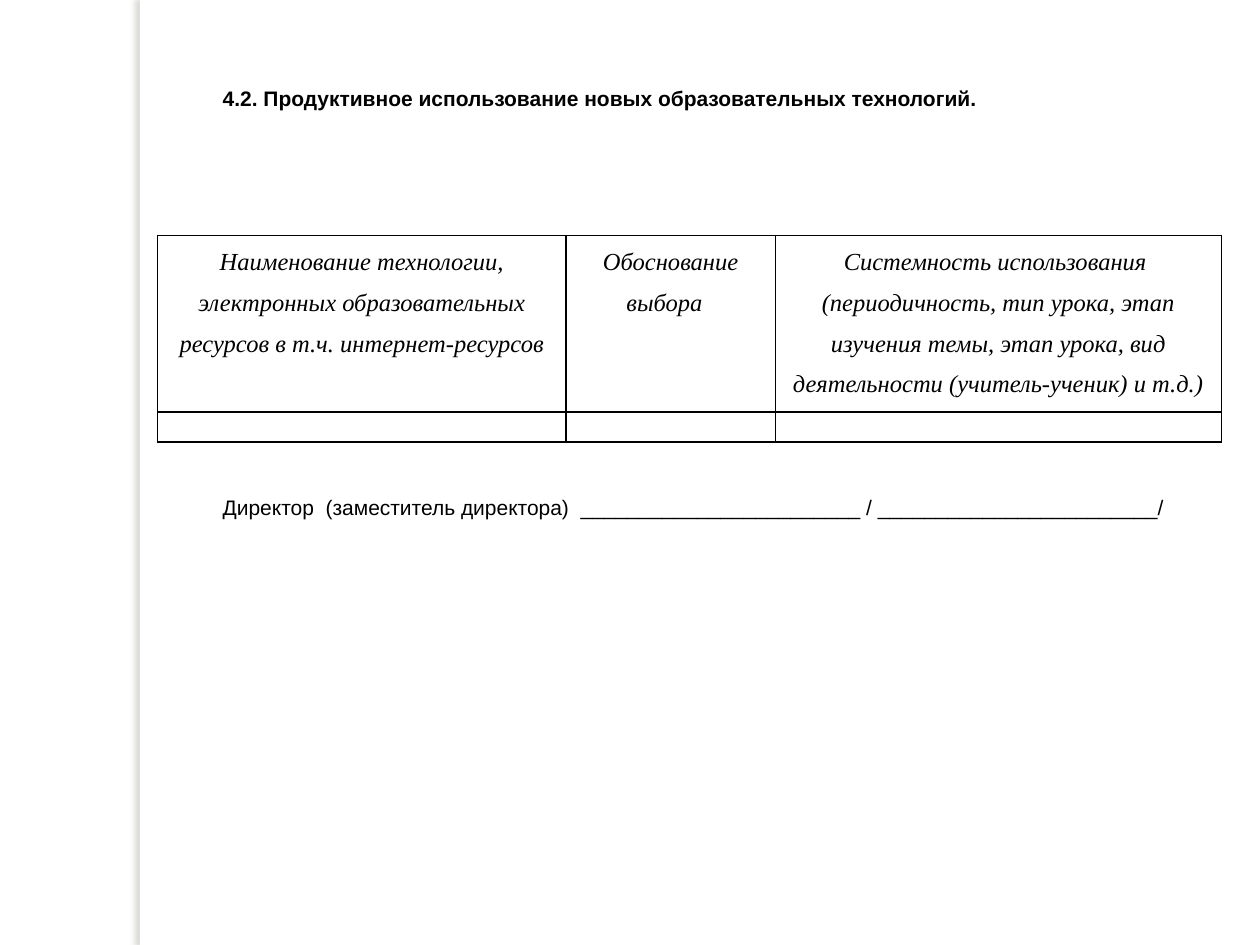
from lxml import etree
from pptx import Presentation
from pptx.dml.color import RGBColor
from pptx.enum.shapes import MSO_SHAPE
from pptx.enum.text import MSO_ANCHOR, PP_ALIGN
from pptx.oxml import parse_xml
from pptx.oxml.ns import nsdecls, qn
from pptx.util import Cm, Pt

RECT = MSO_SHAPE.RECTANGLE
MIDDLE = MSO_ANCHOR.MIDDLE
CENTER, JUSTIFY = PP_ALIGN.CENTER, PP_ALIGN.JUSTIFY
BLACK, WHITE, SHADOW = "000000", "FFFFFF", "736F63"

# text, bold, space before in points
BODY = [
    ("4.2. Продуктивное использование новых образовательных технологий. ", True, 0),
    ("Директор  (заместитель директора)  ________________________ / "
     "________________________/", False, 219),
]
# column width in cm, heading paragraphs
COLUMNS = [
    (8.23, ["Наименование технологии, электронных образовательных ресурсов "
            "в т.ч. интернет-ресурсов"]),
    (4.22, ["Обоснование выбора  "]),
    (8.99, ["Системность использования ",
            "(периодичность, тип урока, этап изучения темы, этап урока, "
            "вид деятельности (учитель-ученик) и т.д.)"]),
]
ROW_HEIGHTS = [3.55, 0.6]


def color(value):
    return RGBColor.from_string(value)


def style(p, font, size, bold=False, italic=False):
    for r in p.runs:
        f = r.font
        f.name, f.size, f.bold, f.italic = font, Pt(size), bold, italic
        f.color.rgb = color(BLACK)


def add_strip(s):
    """Vertical white strip with a soft shadow to its left."""
    sp = s.shapes.add_shape(RECT, Cm(2.82), 0, Cm(0.2), Cm(19.05))
    sp.fill.solid()
    sp.fill.fore_color.rgb = color(WHITE)
    sp.line.fill.background()
    sp._element.spPr.append(parse_xml(
        f'<a:effectLst {nsdecls("a")}><a:outerShdw blurRad="{Pt(3)}" dist="{Pt(3)}" '
        f'dir="10800000" algn="tl" rotWithShape="0"><a:srgbClr val="{SHADOW}">'
        '<a:alpha val="25000"/></a:srgbClr></a:outerShdw></a:effectLst>'))


def add_body(s):
    tf = s.shapes.add_textbox(Cm(2.97), Cm(1.57), Cm(22.43), Cm(9.07)).text_frame
    tf.word_wrap = True
    tf.vertical_anchor = MIDDLE
    for i, (text, bold, before) in enumerate(BODY):
        p = tf.add_paragraph() if i else tf.paragraphs[0]
        p.text = text
        p.alignment = JUSTIFY
        p.space_before = Pt(before)
        p._p.get_or_add_pPr().set("indent", str(Cm(1.27)))
        style(p, "Arial", 12, bold=bold)


def format_cell(cell):
    cell.margin_left = cell.margin_right = Cm(0.19)
    cell.margin_top = cell.margin_bottom = 0
    tcPr = cell._tc.get_or_add_tcPr()
    for side in ("lnL", "lnR", "lnT", "lnB"):
        tcPr.append(parse_xml(
            f'<a:{side} {nsdecls("a")} w="{Pt(1)}"><a:solidFill>'
            f'<a:srgbClr val="{BLACK}"/></a:solidFill></a:{side}>'))
    cell.fill.background()


def add_technology_table(s):
    width = sum(w for w, _ in COLUMNS)
    table = s.shapes.add_table(len(ROW_HEIGHTS), len(COLUMNS), Cm(3.18), Cm(4.75),
                               Cm(width), Cm(sum(ROW_HEIGHTS))).table
    table.first_row = table.horz_banding = False
    for row, height in zip(table.rows, ROW_HEIGHTS):
        row.height = Cm(height)
    for i, (col_width, heading) in enumerate(COLUMNS):
        table.columns[i].width = Cm(col_width)
        head, empty = table.cell(0, i), table.cell(1, i)
        format_cell(head)
        format_cell(empty)
        head.text_frame.text = "\n".join(heading)
        for p in head.text_frame.paragraphs:
            p.alignment = CENTER
            p.line_spacing = 1.5
            style(p, "Times New Roman", 14, italic=True)
        # the size of an empty paragraph keeps the second row low
        end = etree.SubElement(empty.text_frame.paragraphs[0]._p, qn("a:endParaRPr"))
        end.set("sz", "1200")


def main():
    prs = Presentation()
    prs.slide_width, prs.slide_height = Cm(25.4), Cm(19.05)
    s = prs.slides.add_slide(prs.slide_layouts[6])
    s.background.fill.solid()
    s.background.fill.fore_color.rgb = color(WHITE)
    add_strip(s)
    add_body(s)
    add_technology_table(s)
    prs.save("out.pptx")


if __name__ == "__main__":
    main()
